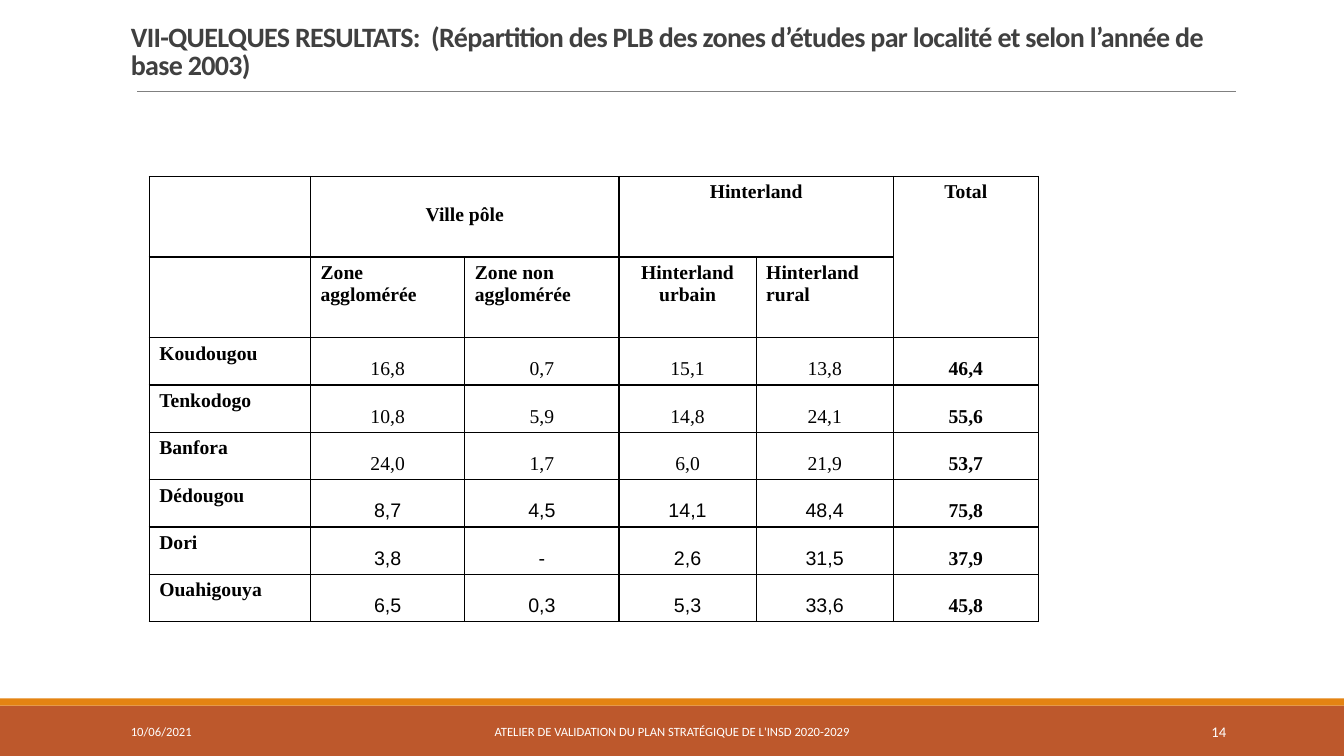
from dataclasses import dataclass

from lxml import etree
from pptx import Presentation
from pptx import util as u
from pptx.dml.color import RGBColor
from pptx.enum import shapes, text
from pptx.oxml import parse_xml
from pptx.oxml.ns import nsdecls, qn

LEFT, CENTER, RIGHT = text.PP_ALIGN.LEFT, text.PP_ALIGN.CENTER, text.PP_ALIGN.RIGHT
TOP, MIDDLE, BOTTOM = text.MSO_ANCHOR.TOP, text.MSO_ANCHOR.MIDDLE, text.MSO_ANCHOR.BOTTOM


@dataclass(frozen=True)
class Theme:
    """Colours, fonts and type sizes of the slide."""
    rust: str = "BD582C"
    orange: str = "E48312"
    rule: str = "808080"
    heading: str = "404040"
    ink: str = "000000"
    white: str = "FFFFFF"
    sans: str = "Calibri"
    serif: str = "Times New Roman"
    plain: str = "Arial"
    title_size: float = 20
    table_size: float = 14
    footer_size: float = 9
    number_size: float = 10.5


class Page:
    """Draws styled elements on one slide."""

    def __init__(self, deck, theme):
        self.theme = theme
        self.slide = deck.slides.add_slide(deck.slide_layouts[6])

    def band(self, top, height, color):
        box = self.slide.shapes.add_shape(
            shapes.MSO_SHAPE.RECTANGLE, 0, u.Inches(top), u.Inches(13.33), u.Inches(height))
        box.shadow.inherit = False
        box.fill.solid()
        box.fill.fore_color.rgb = RGBColor.from_string(color)
        box.line.fill.background()

    def rule(self, left, right, top):
        line = self.slide.shapes.add_connector(
            shapes.MSO_CONNECTOR.STRAIGHT,
            u.Inches(left), u.Inches(top), u.Inches(right), u.Inches(top))
        line.line.color.rgb = RGBColor.from_string(self.theme.rule)
        line.line.width = u.Pt(0.5)
        etree.SubElement(line._element.spPr, qn("a:effectLst"))

    def add_span(self, para, words, size, font, color, bold=False, align=LEFT):
        para.alignment = align
        span = para.add_run()
        span.text = words
        span.font.size = u.Pt(size)
        span.font.name = font
        span.font.bold = bold
        span.font.color.rgb = RGBColor.from_string(color)
        return span

    def label(self, place, words, size, color, align=LEFT, anchor=MIDDLE, bold=False):
        box = self.slide.shapes.add_textbox(*map(u.Inches, place))
        box.text_frame.word_wrap = True
        box.text_frame.vertical_anchor = anchor
        para = box.text_frame.paragraphs[0]
        return para, self.add_span(para, words, size, self.theme.sans, color, bold, align)

    def title(self, place, words):
        para, span = self.label(
            place, words, self.theme.title_size, self.theme.heading, anchor=BOTTOM, bold=True)
        para.line_spacing = 0.85
        span.font._element.set("spc", "-50")

    def grid(self, left, top, widths, heights):
        frame = self.slide.shapes.add_table(
            len(heights), len(widths), u.Inches(left), u.Inches(top),
            u.Inches(sum(widths)), u.Inches(sum(heights)))
        table = frame.table
        table.first_row = table.horz_banding = False
        for column, width in zip(table.columns, widths):
            column.width = u.Inches(width)
        for row, height in zip(table.rows, heights):
            row.height = u.Inches(height)
        for cell in table.iter_cells():
            self.outline(cell)
            cell.fill.background()
        return table

    def outline(self, cell):
        properties = cell._tc.get_or_add_tcPr()
        for side in ("lnL", "lnR", "lnT", "lnB"):
            properties.append(parse_xml(
                f'<a:{side} {nsdecls("a")} w="12700"><a:solidFill>'
                f'<a:srgbClr val="{self.theme.ink}"/></a:solidFill></a:{side}>'))

    def entry(self, cell, words, align=LEFT, anchor=TOP, bold=True, font=None):
        cell.vertical_anchor = anchor
        self.add_span(cell.text_frame.paragraphs[0], words, self.theme.table_size,
                      font or self.theme.serif, self.theme.ink, bold, align)


GROUPS = [("Ville pôle", 1, 0, 2), ("Hinterland", 3, 0, 4), ("Total", 5, 1, 5)]
ZONES = [("Zone agglomérée", LEFT), ("Zone non agglomérée", LEFT),
         ("Hinterland urbain", CENTER), ("Hinterland rural", LEFT)]
TOWNS = [
    ("Koudougou", "16,8", "0,7", "15,1", "13,8", "46,4"),
    ("Tenkodogo", "10,8", "5,9", "14,8", "24,1", "55,6"),
    ("Banfora", "24,0", "1,7", "6,0", "21,9", "53,7"),
    ("Dédougou", "8,7", "4,5", "14,1", "48,4", "75,8"),
    ("Dori", "3,8", "-", "2,6", "31,5", "37,9"),
    ("Ouahigouya", "6,5", "0,3", "5,3", "33,6", "45,8"),
]
ARIAL_TOWNS = {"Dédougou", "Dori", "Ouahigouya"}


def fill_table(page):
    """Draw the table of shares by town and zone."""
    table = page.grid(1.48, 1.75, [1.6, 1.53, 1.53, 1.36, 1.36, 1.44],
                      [0.8] * 2 + [0.47] * len(TOWNS))
    for words, first, last_row, last in GROUPS:
        cell = table.cell(0, first)
        cell.merge(table.cell(last_row, last))
        page.entry(cell, words, CENTER)
    table.cell(0, 1).margin_top = u.Inches(0.27)
    for column, (words, align) in enumerate(ZONES, 1):
        page.entry(table.cell(1, column), words, align)
    for row, (town, *shares, total) in enumerate(TOWNS, 2):
        font = page.theme.plain if town in ARIAL_TOWNS else page.theme.serif
        page.entry(table.cell(row, 0), town)
        for column, share in enumerate(shares, 1):
            page.entry(table.cell(row, column), share, CENTER, BOTTOM, False, font)
        page.entry(table.cell(row, 5), total, CENTER, BOTTOM)


def main():
    """Build and save the slide."""
    deck = Presentation()
    deck.slide_width, deck.slide_height = u.Inches(13.33), u.Inches(7.5)
    theme = Theme()
    page = Page(deck, theme)
    page.band(7, 0.5, theme.rust)
    page.band(6.93, 0.07, theme.orange)
    page.rule(1.36, 12.26, 0.91)
    page.title((1.2, 0.13, 11, 0.73),
               "VII-QUELQUES RESULTATS:  (Répartition des PLB des zones d’études "
               "par localité et selon l’année de base 2003)")
    page.label((1.2, 7.06, 2.7, 0.4), "10/06/2021", theme.footer_size, theme.white)
    page.label((4.03, 7.06, 5.27, 0.4),
               "ATELIER DE VALIDATION DU PLAN STRATÉGIQUE DE L'INSD 2020-2029",
               theme.footer_size, theme.white, CENTER)
    page.label((10.83, 7.06, 1.43, 0.4), "14", theme.number_size, theme.white, RIGHT)
    fill_table(page)
    deck.save("out.pptx")


if __name__ == "__main__":
    main()
